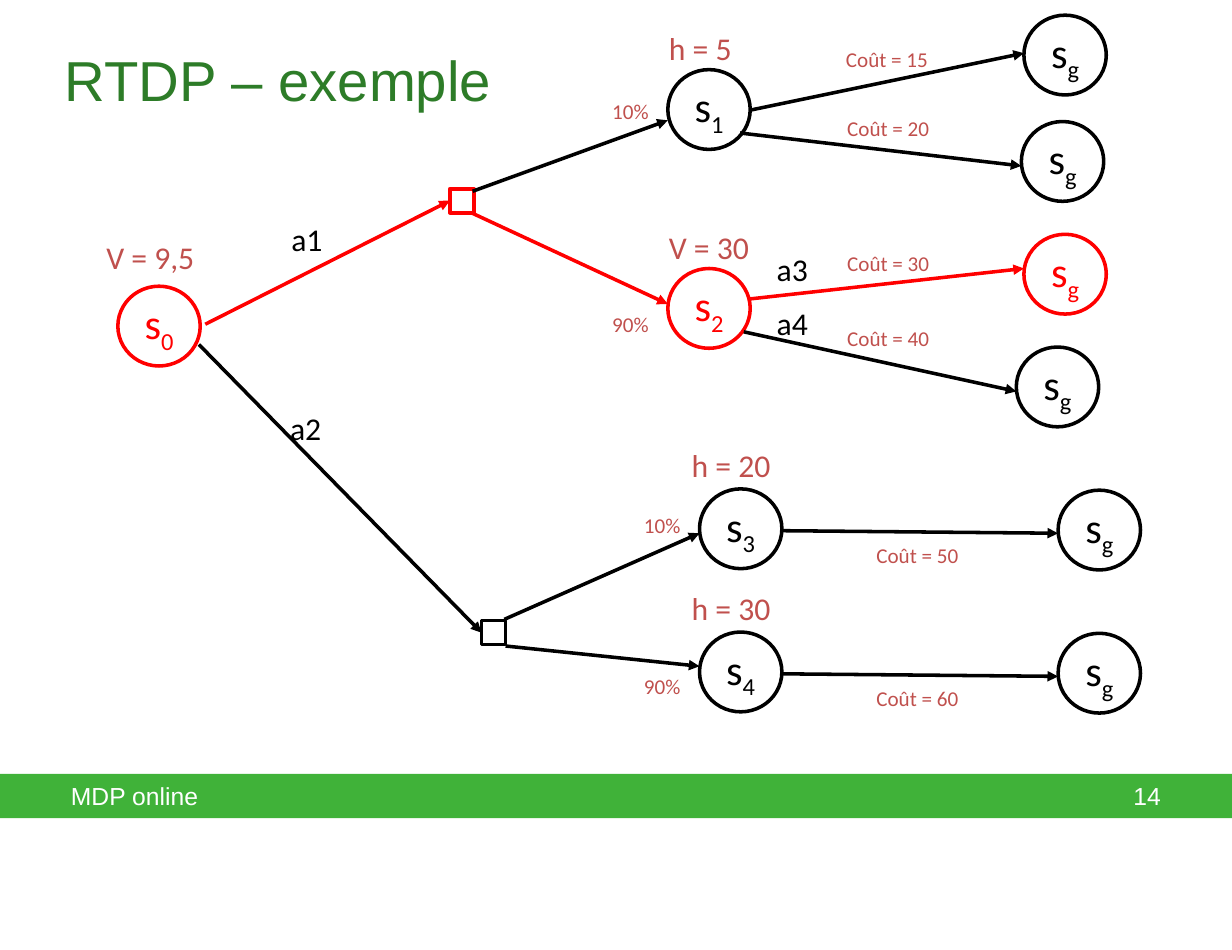
"""Build the RTDP example slide: a decision tree with states, actions and costs."""
import pptx
import pptx.dml.color
import pptx.enum.shapes
import pptx.enum.text
import pptx.oxml
import pptx.oxml.ns
import pptx.util

Inches = pptx.util.Inches
SHAPE = pptx.enum.shapes.MSO_SHAPE
ALIGN = pptx.enum.text.PP_ALIGN
ANCHOR = pptx.enum.text.MSO_ANCHOR
SLIDE_W, SLIDE_H = 700 / 72, 7.5


class Theme:
    black = pptx.dml.color.RGBColor.from_string("000000")
    white = pptx.dml.color.RGBColor.from_string("FFFFFF")
    red = pptx.dml.color.RGBColor.from_string("FF0000")
    note = pptx.dml.color.RGBColor.from_string("C0504D")
    title = pptx.dml.color.RGBColor.from_string("2D7C28")
    bar = pptx.dml.color.RGBColor.from_string("40B239")
    title_size, state_size, label_size, footer_size, cost_size = 32, 24, 18, 14, 12
    heading_font, body_font = "Arial", "Calibri"
    stroke = pptx.util.Pt(2)


def write(sp, text, sub="", size=Theme.label_size, color=Theme.black, font=Theme.body_font,
          align=ALIGN.LEFT, anchor=ANCHOR.TOP, wrap=False, grow=False, left=0.1, right=0.1):
    tf = sp.text_frame
    tf.word_wrap = wrap
    tf.vertical_anchor = anchor
    tf.margin_left, tf.margin_right = Inches(left), Inches(right)
    if grow:
        tf.auto_size = pptx.enum.text.MSO_AUTO_SIZE.SHAPE_TO_FIT_TEXT
    p = tf.paragraphs[0]
    p.alignment = align
    for part in filter(None, (text, sub)):
        r = p.add_run()
        r.text = part
        r.font.size = pptx.util.Pt(size)
        r.font.name = font
        r.font.color.rgb = color
    if sub:
        r.font._element.set("baseline", "-25000")


def draw(kind, x, y, w, h, fill=None, line=None):
    sp = s.shapes.add_shape(kind, Inches(x), Inches(y), Inches(w), Inches(h))
    sp.shadow.inherit = False
    if fill is None:
        sp.fill.background()
    else:
        sp.fill.solid()
        sp.fill.fore_color.rgb = fill
    if line is None:
        sp.line.fill.background()
    else:
        sp.line.color.rgb = line
        sp.line.width = Theme.stroke
    return sp


prs = pptx.Presentation()
prs.slide_width = Inches(SLIDE_W)
prs.slide_height = Inches(SLIDE_H)
s = prs.slides.add_slide(prs.slide_layouts[6])

draw(SHAPE.RECTANGLE, 0, 6.11, SLIDE_W, 0.35, fill=Theme.bar)
footers = [
    ("MDP online", 0, 8.48, ALIGN.LEFT, 0.56, 0.1),
    ("14", 8.54, 1.18, ALIGN.RIGHT, 0.1, 0.56),
]
for text, x, w, align, left, right in footers:
    sp = s.shapes.add_textbox(Inches(x), Inches(6.11), Inches(w), Inches(0.35))
    write(sp, text, size=Theme.footer_size, color=Theme.white, font=Theme.heading_font,
          align=align, anchor=ANCHOR.MIDDLE, wrap=True, left=left, right=right)

sp = s.shapes.add_textbox(Inches(0.41), Inches(0.31), Inches(3.6), Inches(0.64))
write(sp, "RTDP – exemple", size=Theme.title_size, color=Theme.title,
      font=Theme.heading_font, grow=True)

states = [
    ("0", 0.93, 2.26, Theme.red),
    ("1", 5.27, 0.55, Theme.black),
    ("2", 5.27, 2.12, Theme.red),
    ("3", 5.52, 3.86, Theme.black),
    ("4", 5.52, 4.99, Theme.black),
    ("g", 8.08, 0.12, Theme.black),
    ("g", 8.06, 0.96, Theme.black),
    ("g", 8.08, 1.85, Theme.red),
    ("g", 8.02, 2.74, Theme.black),
    ("g", 8.35, 3.87, Theme.black),
    ("g", 8.35, 5, Theme.black),
]
for sub, x, y, color in states:
    sp = draw(SHAPE.OVAL, x, y, 0.65, 0.63, line=color)
    write(sp, "s", sub=sub, size=Theme.state_size, color=color,
          align=ALIGN.CENTER, anchor=ANCHOR.MIDDLE)

chance_a1 = draw(SHAPE.RECTANGLE, 3.55, 1.49, 0.19, 0.19, fill=Theme.white, line=Theme.red)
chance_a2 = draw(SHAPE.RECTANGLE, 3.8, 4.9, 0.19, 0.19, fill=Theme.white, line=Theme.black)

arrows = [
    (1.62, 2.56, 3.55, 1.58, Theme.red, chance_a1),
    (1.57, 2.72, 3.8, 5, Theme.black, chance_a2),
    (3.73, 1.51, 5.27, 0.95, Theme.black, None),
    (3.72, 1.68, 5.27, 2.4, Theme.red, None),
    (3.98, 4.89, 5.52, 4.21, Theme.black, None),
    (3.99, 5.1, 5.52, 5.26, Theme.black, None),
    (5.92, 0.87, 8.08, 0.42, Theme.black, None),
    (5.84, 1.05, 8.06, 1.31, Theme.black, None),
    (5.92, 2.36, 8.08, 2.12, Theme.red, None),
    (5.87, 2.62, 8.02, 3.09, Theme.black, None),
    (6.18, 4.19, 8.35, 4.21, Theme.black, None),
    (6.18, 5.32, 8.35, 5.34, Theme.black, None),
]
for x1, y1, x2, y2, color, target in arrows:
    cx = s.shapes.add_connector(pptx.enum.shapes.MSO_CONNECTOR.STRAIGHT,
                                Inches(x1), Inches(y1), Inches(x2), Inches(y2))
    if target is not None:
        cx.end_connect(target, 1)
    cx.line.color.rgb = color
    cx.line.width = Theme.stroke
    tail = pptx.oxml.parse_xml(f'<a:tailEnd {pptx.oxml.ns.nsdecls("a")} type="triangle"/>')
    cx.line._get_or_add_ln().append(tail)
    flat = pptx.oxml.parse_xml(f'<a:effectLst {pptx.oxml.ns.nsdecls("a")}/>')
    cx._element.spPr.append(flat)

labels = [
    ("V = 9,5", 0.74, 1.83, 0.91, Theme.note),
    ("h = 5", 5.18, 0.18, 0.71, Theme.note),
    ("V = 30", 5.18, 1.75, 0.84, Theme.note),
    ("h = 20", 5.36, 3.47, 0.83, Theme.note),
    ("h = 30", 5.36, 4.6, 0.83, Theme.note),
    ("a1", 2.2, 1.69, 0.45, Theme.black),
    ("a2", 2.19, 3.18, 0.45, Theme.black),
    ("a3", 6.03, 1.92, 0.45, Theme.black),
    ("a4", 6.03, 2.35, 0.45, Theme.black),
]
for text, x, y, w, color in labels:
    sp = s.shapes.add_textbox(Inches(x), Inches(y), Inches(w), Inches(0.4))
    write(sp, text, color=color, grow=True)

costs_and_odds = [
    ("10%", 4.73, 0.73, 0.49),
    ("90%", 4.73, 2.41, 0.49),
    ("10%", 4.98, 4, 0.49),
    ("90%", 4.98, 5.27, 0.49),
    ("Coût = 15", 6.57, 0.32, 0.86),
    ("Coût = 20", 6.58, 0.86, 0.86),
    ("Coût = 30", 6.58, 1.93, 0.86),
    ("Coût = 40", 6.58, 2.52, 0.86),
    ("Coût = 50", 6.81, 4.23, 0.86),
    ("Coût = 60", 6.81, 5.36, 0.86),
]
for text, x, y, w in costs_and_odds:
    sp = s.shapes.add_textbox(Inches(x), Inches(y), Inches(w), Inches(0.3))
    write(sp, text, size=Theme.cost_size, color=Theme.note, align=ALIGN.CENTER, grow=True)

prs.save("out.pptx")
